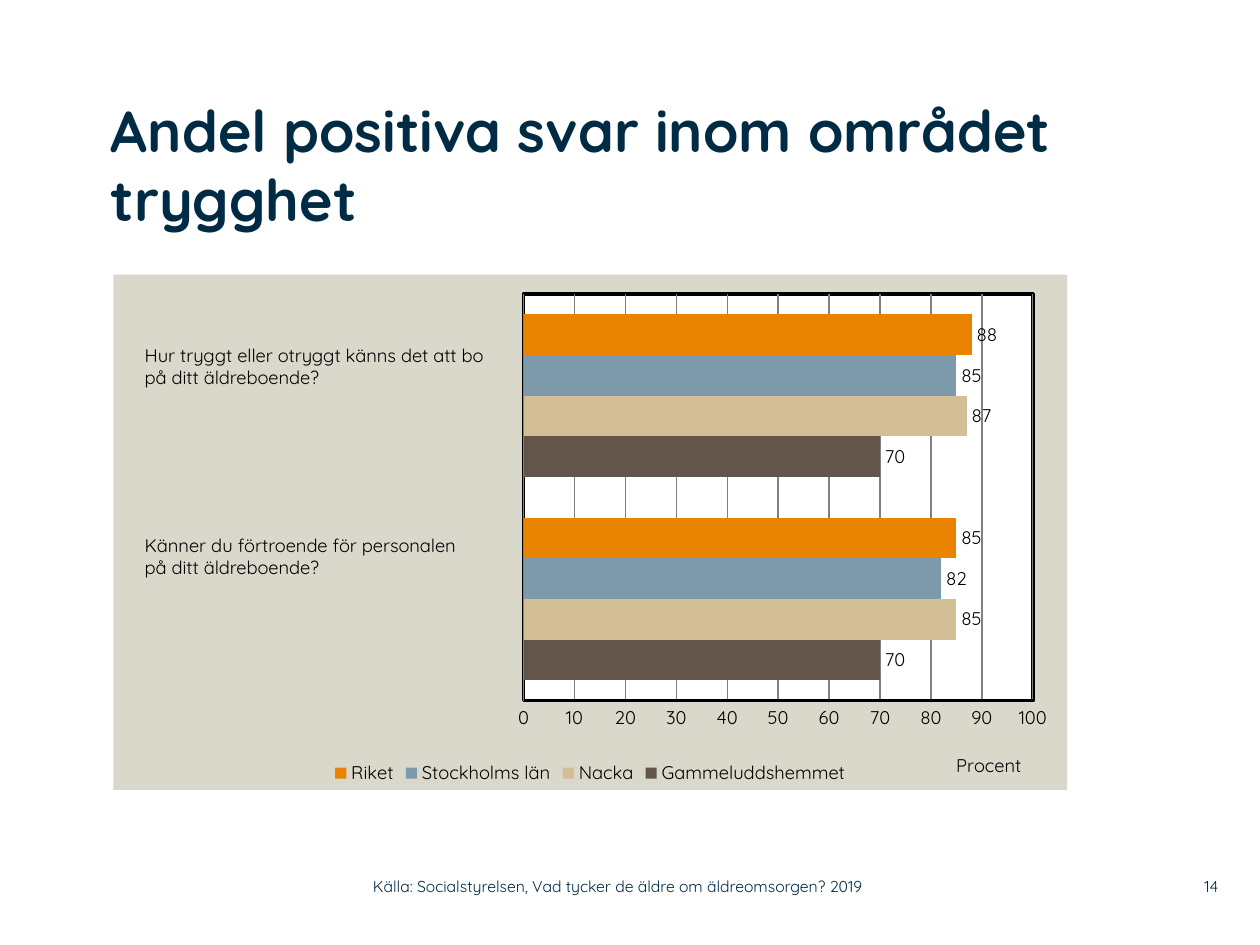
import pptx
import pptx.chart.data
import pptx.dml.color
import pptx.enum.chart
import pptx.enum.text
import pptx.oxml
import pptx.oxml.ns
import pptx.util
from dataclasses import dataclass

Inches = pptx.util.Inches
Pt = pptx.util.Pt
rgb = pptx.dml.color.RGBColor.from_string
PP_ALIGN = pptx.enum.text.PP_ALIGN
ANCHOR = pptx.enum.text.MSO_ANCHOR


@dataclass(frozen=True)
class Theme:
    font: str = "Quicksand"
    navy: str = "002B45"
    black: str = "000000"
    white: str = "FFFFFF"
    panel: str = "DAD7CB"
    grid: str = "808080"
    title_size: float = 33
    body_size: float = 10.5
    footer_size: float = 9


theme = Theme()


def add_run(paragraph, text, size, color, bold=False):
    run = paragraph.add_run()
    run.text = text
    run.font.name = theme.font
    run.font.size = Pt(size)
    run.font.bold = bold
    run.font.color.rgb = rgb(color)


def layout_xml(x, y, w=None, h=None):
    """Manual chart layout, in fractions of the chart's size."""
    inner = '<c:layoutTarget val="inner"/>' if w else ""
    extent = f'<c:w val="{w}"/><c:h val="{h}"/>' if w else ""
    return pptx.oxml.parse_xml(
        f'<c:layout {pptx.oxml.ns.nsdecls("c")}><c:manualLayout>{inner}'
        '<c:xMode val="edge"/><c:yMode val="edge"/>'
        f'<c:x val="{x}"/><c:y val="{y}"/>{extent}'
        '</c:manualLayout></c:layout>')


prs = pptx.Presentation()
prs.slide_width, prs.slide_height = Inches(10), Inches(7.5)
slide = prs.slides.add_slide(prs.slide_layouts[5])

# Title
title = slide.shapes.title
title.left, title.top = Inches(0.88), Inches(0.75)
title.width, title.height = Inches(7.6), Inches(1.42)
frame = title.text_frame
frame.margin_left = frame.margin_right = frame.margin_top = frame.margin_bottom = 0
frame.vertical_anchor = ANCHOR.TOP
frame.word_wrap = True
frame.paragraphs[0].alignment = PP_ALIGN.LEFT
add_run(frame.paragraphs[0], "Andel positiva svar inom området trygghet",
        theme.title_size, theme.navy, bold=True)

# Chart data, from the bottom bar of each group upwards
answers = [
    ("Gammeluddshemmet", (70, 70), "635549"),
    ("Nacka", (85, 87), "D3BF96"),
    ("Stockholms län", (82, 85), "7D9AAA"),
    ("Riket", (85, 88), "E98300"),
]
data = pptx.chart.data.CategoryChartData()
data.categories = ["1", "2"]
for name, values, color in answers:
    data.add_series(name, values)
chart = slide.shapes.add_chart(
    pptx.enum.chart.XL_CHART_TYPE.BAR_CLUSTERED,
    Inches(0.9), Inches(2.18), Inches(7.57), Inches(4.09), data).chart
chart.has_title = False
chart.font.name = theme.font
chart.font.size = Pt(theme.body_size)
chart.font.color.rgb = rgb(theme.black)

# Bars and their values
plot = chart.plots[0]
plot.gap_width = 100
plot.overlap = 0
plot.vary_by_categories = False
for series, (name, values, color) in zip(plot.series, answers):
    series.format.fill.solid()
    series.format.fill.fore_color.rgb = rgb(color)
    labels = series.data_labels
    labels.show_value = True
    labels.position = pptx.enum.chart.XL_LABEL_POSITION.OUTSIDE_END
    labels.font.name = theme.font
    labels.font.size = Pt(theme.body_size)

# Axes
chart.category_axis.visible = False
percent_axis = chart.value_axis
percent_axis.minimum_scale, percent_axis.maximum_scale = 0, 100
percent_axis.major_unit = 10
percent_axis.major_tick_mark = pptx.enum.chart.XL_TICK_MARK.NONE
percent_axis.format.line.color.rgb = rgb(theme.black)
percent_axis.format.line.width = Pt(2)
percent_axis.has_major_gridlines = True
percent_axis.major_gridlines.format.line.color.rgb = rgb(theme.grid)
percent_axis.major_gridlines.format.line.width = Pt(0.75)
axis_title = percent_axis.axis_title
add_run(axis_title.text_frame.paragraphs[0], "Procent",
        theme.body_size, theme.black)

# Legend
chart.has_legend = True
chart.legend.position = pptx.enum.chart.XL_LEGEND_POSITION.BOTTOM
chart.legend.include_in_layout = False
chart.legend.font.name = theme.font
chart.legend.font.size = Pt(theme.body_size)

# Places of the plot and the axis title
qn = pptx.oxml.ns.qn
chart_space = chart.element
plot_area = chart_space.find(f".//{qn('c:plotArea')}")
title_element = plot_area.find(f".//{qn('c:valAx')}/{qn('c:title')}")
for parent, index, layout in [
        (plot_area, 0, layout_xml(0.43, 0.038, 0.534, 0.789)),
        (title_element, 1, layout_xml(0.88, 0.92))]:
    for old in parent.findall(qn("c:layout")):
        parent.remove(old)
    parent.insert(index, layout)

# Panel and plot backgrounds
for fill, line in [(theme.white, theme.black), (theme.panel, None)]:
    outline = (f'<a:ln w="{Pt(2)}"><a:solidFill><a:srgbClr val="{line}"/></a:solidFill></a:ln>'
               if line else '<a:ln><a:noFill/></a:ln>')
    properties = pptx.oxml.parse_xml(
        f'<c:spPr {pptx.oxml.ns.nsdecls("c", "a")}><a:solidFill>'
        f'<a:srgbClr val="{fill}"/></a:solidFill>{outline}</c:spPr>')
    if line:
        plot_area.append(properties)
    else:
        chart_space.find(qn("c:chart")).addnext(properties)

# Questions beside the bars
questions = [
    (2.68, ["Hur tryggt eller otryggt känns det att bo på ditt äldreboende?"]),
    (4.19, ["Känner du förtroende för personalen", "på ditt äldreboende?"]),
]
for top, lines in questions:
    question = slide.shapes.add_textbox(
        Inches(1.05), Inches(top), Inches(2.94), Inches(0.45)).text_frame
    question.word_wrap = True
    question.auto_size = pptx.enum.text.MSO_AUTO_SIZE.SHAPE_TO_FIT_TEXT
    for number, line in enumerate(lines):
        paragraph = question.add_paragraph() if number else question.paragraphs[0]
        add_run(paragraph, line, theme.body_size, theme.black)

# Page number and source
footers = [
    (9.2, 0.47, PP_ALIGN.RIGHT, "14"),
    (2.96, 4.43, PP_ALIGN.LEFT,
     "Källa: Socialstyrelsen, Vad tycker de äldre om äldreomsorgen? 2019"),
]
for left, width, alignment, text in footers:
    footer = slide.shapes.add_textbox(
        Inches(left), Inches(6.89), Inches(width), Inches(0.29)).text_frame
    footer.margin_left = footer.margin_right = footer.margin_top = footer.margin_bottom = 0
    footer.word_wrap = True
    footer.vertical_anchor = ANCHOR.MIDDLE
    footer.paragraphs[0].alignment = alignment
    add_run(footer.paragraphs[0], text, theme.footer_size, theme.navy)

prs.save("out.pptx")
